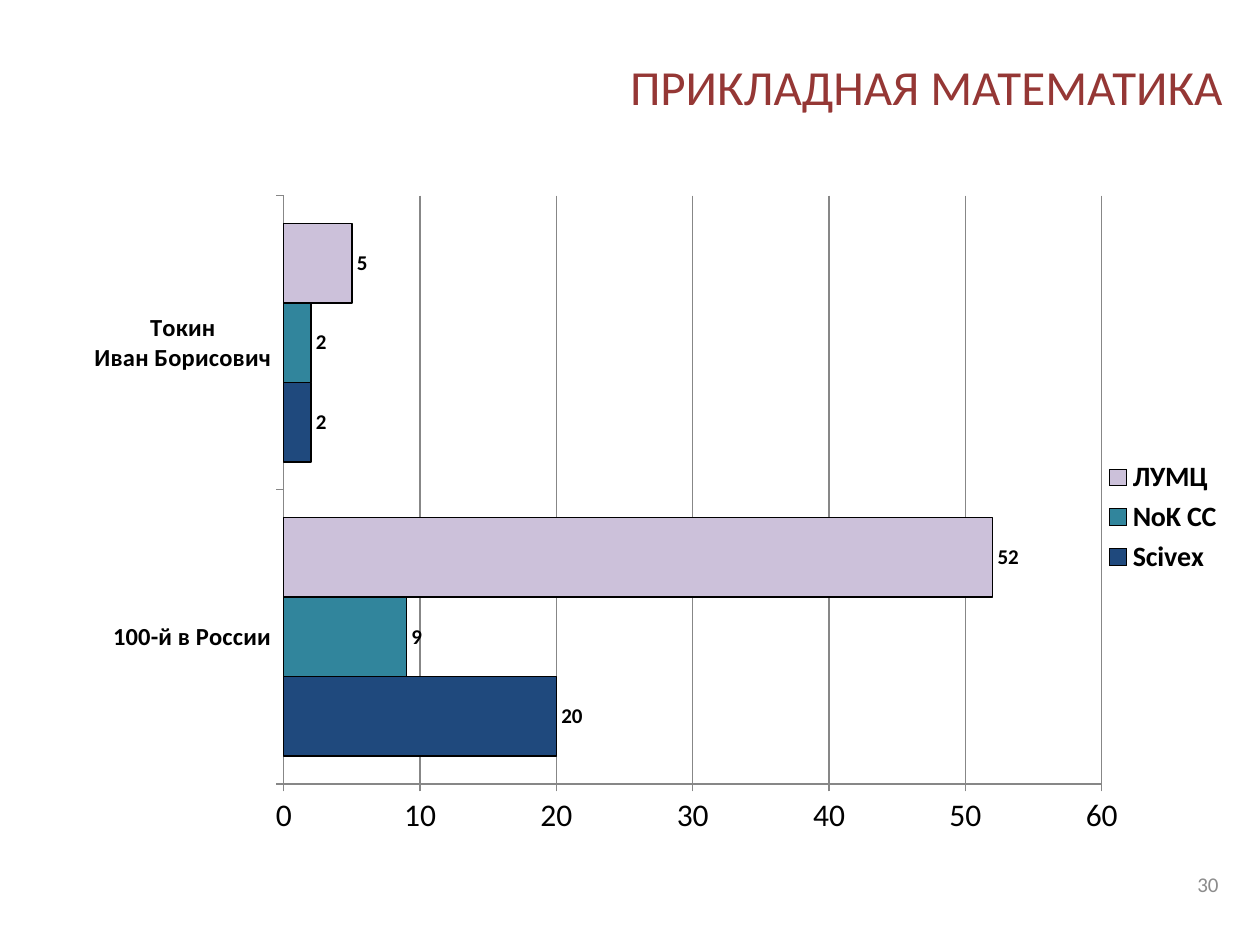
from lxml import etree
from pptx import Presentation
from pptx import util as u
from pptx.chart.data import CategoryChartData
from pptx.dml.color import RGBColor
from pptx.enum import chart as ch, text
from pptx.oxml import ns

GRID = "878787"
BLACK = "000000"


def rgb(value):
    return RGBColor.from_string(value)


def place(left, top, width, height):
    return [u.Inches(v) for v in (left, top, width, height)]


class SlideBuilder:
    font = "Calibri"

    def __init__(self, slide):
        self.s = slide

    def style(self, font, size, color=BLACK, bold=False):
        font.name = self.font
        font.size = u.Pt(size)
        font.bold = bold
        font.color.rgb = rgb(color)

    def line(self, fmt, color):
        fmt.color.rgb = rgb(color)
        fmt.width = u.Pt(0.75)

    def right_text(self, box, content, size, color):
        tf = self.s.shapes.add_textbox(*place(*box)).text_frame
        tf.word_wrap = True
        tf.vertical_anchor = text.MSO_ANCHOR.MIDDLE
        p = tf.paragraphs[0]
        p.text = content
        p.alignment = text.PP_ALIGN.RIGHT
        self.style(p.runs[0].font, size, color)

    def bar_chart(self, box, categories, series, plot_box):
        data = CategoryChartData()
        data.categories = categories
        for name, values, _ in series:
            data.add_series(name, values)
        chart = self.s.shapes.add_chart(
            ch.XL_CHART_TYPE.BAR_CLUSTERED, *place(*box), data).chart
        chart.has_title = False
        self.style(chart.font, 18)

        plot = chart.plots[0]
        plot.gap_width = 70
        plot.overlap = 0
        plot.vary_by_categories = False
        for ser, (_, _, color) in zip(plot.series, series):
            ser.format.fill.solid()
            ser.format.fill.fore_color.rgb = rgb(color)
            self.line(ser.format.line, BLACK)
            labels = ser.data_labels
            labels.show_value = True
            labels.position = ch.XL_LABEL_POSITION.OUTSIDE_END
            self.style(labels.font, 12, bold=True)

        for axis, size, bold in ((chart.category_axis, 14, True),
                                 (chart.value_axis, 18, False)):
            axis.major_tick_mark = ch.XL_TICK_MARK.OUTSIDE
            axis.minor_tick_mark = ch.XL_TICK_MARK.NONE
            self.line(axis.format.line, GRID)
            self.style(axis.tick_labels.font, size, bold=bold)
        axis = chart.value_axis
        axis.minimum_scale, axis.maximum_scale, axis.major_unit = 0, 60, 10
        axis.has_major_gridlines = True
        self.line(axis.major_gridlines.format.line, GRID)

        chart.has_legend = True
        chart.legend.position = ch.XL_LEGEND_POSITION.RIGHT
        chart.legend.include_in_layout = False
        self.style(chart.legend.font, 16, bold=True)
        self.plot_layout(chart, plot_box)

    def plot_layout(self, chart, plot_box):
        area = chart.element.find(".//" + ns.qn("c:plotArea"))
        for old in area.findall(ns.qn("c:layout")):
            area.remove(old)
        layout = etree.Element(ns.qn("c:layout"))
        manual = etree.SubElement(layout, ns.qn("c:manualLayout"))
        settings = [("layoutTarget", "inner"), ("xMode", "edge"), ("yMode", "edge")]
        settings += zip("xywh", plot_box)
        for tag, value in settings:
            etree.SubElement(manual, ns.qn("c:" + tag)).set("val", str(value))
        area.insert(0, layout)


def main():
    prs = Presentation()
    prs.slide_width, prs.slide_height = u.Inches(10), u.Inches(7.5)
    s = SlideBuilder(prs.slides.add_slide(prs.slide_layouts[6]))
    s.right_text((2.56, 0.3, 7.24, 0.77), "ПРИКЛАДНАЯ МАТЕМАТИКА", 28, "953735")
    s.bar_chart(
        (0.12, 1.39, 9.69, 5.43),
        ["100-й в России", "Токин\nИван Борисович"],
        [("Scivex", (20, 2), "1F497D"),
         ("NoK CC", (9, 2), "31859C"),
         ("ЛУМЦ", (52, 5), "CCC1DA")],
        (0.22, 0.03, 0.67, 0.86))
    s.right_text((7.44, 6.82, 2.33, 0.4), "30", 12, "8C8C8C")
    prs.save("out.pptx")


if __name__ == "__main__":
    main()
